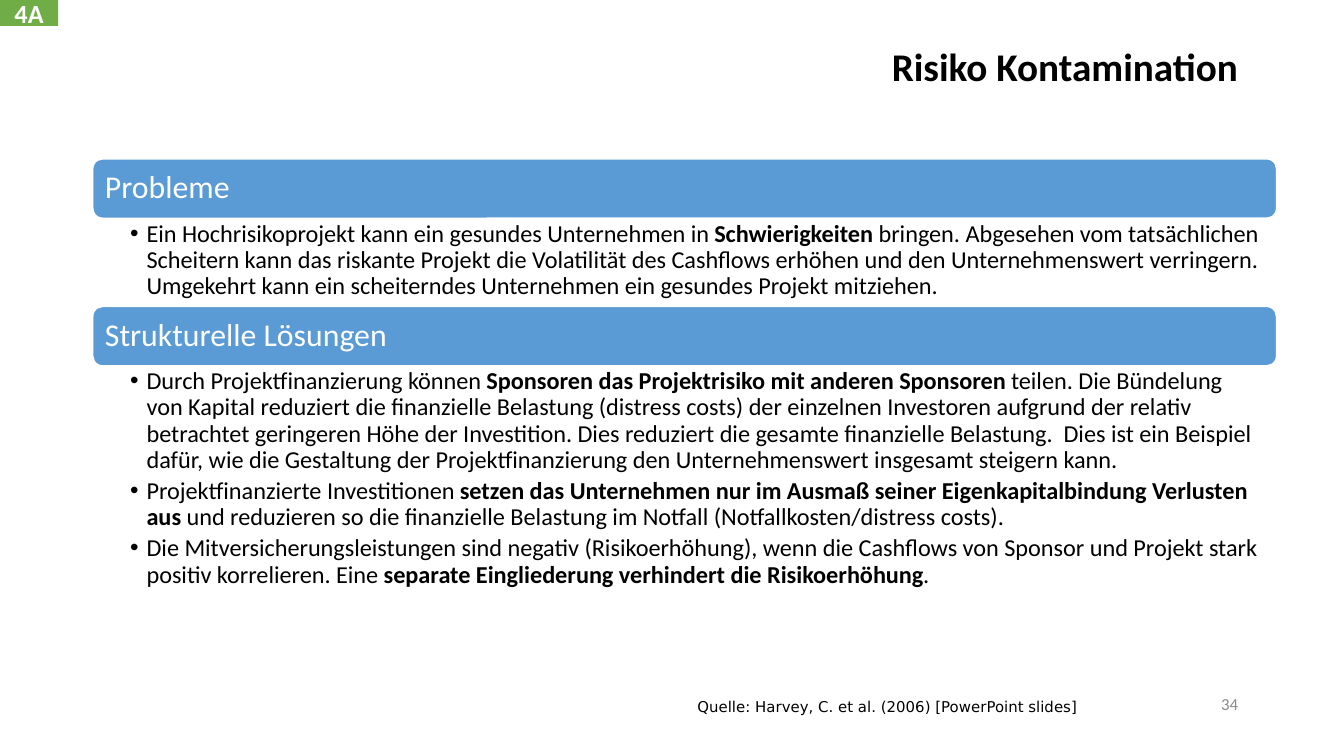
import pptx
import pptx.dml.color
import pptx.enum.shapes
import pptx.enum.text
import pptx.oxml.ns
import pptx.util
from lxml import etree

Cm = pptx.util.Cm
Pt = pptx.util.Pt
Align = pptx.enum.text.PP_ALIGN
Anchor = pptx.enum.text.MSO_ANCHOR
Preset = pptx.enum.shapes.MSO_SHAPE

COLORS = {
    "bar": "5B9BD5",
    "tag": "70AD47",
    "light": "FFFFFF",
    "text": "000000",
    "muted": "8C8C8C",
}
LEFT, WIDTH = 1.75, 22.38
BAR_HEIGHT = 1.13

# Each section: heading, top of its bar, height of its list, and bullets.
# Every bullet is plain text, a bold part, plain text.
SECTIONS = [
    ("Probleme", 3.0, 1.65, [
        ("Ein Hochrisikoprojekt kann ein gesundes Unternehmen in ",
         "Schwierigkeiten",
         " bringen. Abgesehen vom tatsächlichen Scheitern kann das riskante Projekt "
         "die Volatilität des Cashflows erhöhen und den Unternehmenswert verringern. "
         "Umgekehrt kann ein scheiterndes Unternehmen ein gesundes Projekt mitziehen."),
    ]),
    ("Strukturelle Lösungen", 5.79, 4.4, [
        ("Durch Projektfinanzierung können ",
         "Sponsoren das Projektrisiko mit anderen Sponsoren ",
         "teilen. Die Bündelung von Kapital reduziert die finanzielle Belastung "
         "(distress costs) der einzelnen Investoren aufgrund der relativ betrachtet "
         "geringeren Höhe der Investition. Dies reduziert die gesamte finanzielle "
         "Belastung.  Dies ist ein Beispiel dafür, wie die Gestaltung der "
         "Projektfinanzierung den Unternehmenswert insgesamt steigern kann."),
        ("Projektfinanzierte Investitionen ",
         "setzen das Unternehmen nur im Ausmaß seiner Eigenkapitalbindung Verlusten aus ",
         "und reduzieren so die finanzielle Belastung im Notfall "
         "(Notfallkosten/distress costs)."),
        ("Die Mitversicherungsleistungen sind negativ (Risikoerhöhung), wenn die "
         "Cashflows von Sponsor und Projekt stark positiv korrelieren. Eine ",
         "separate Eingliederung verhindert die Risikoerhöhung",
         "."),
    ]),
]


def rgb(name):
    return pptx.dml.color.RGBColor.from_string(COLORS[name])


def place(shape, left, top, width, height):
    shape.left, shape.top = Cm(left), Cm(top)
    shape.width, shape.height = Cm(width), Cm(height)


def style_font(font, size, color, bold=False, name="Calibri"):
    font.name, font.size, font.bold = name, Pt(size), bold
    font.color.rgb = rgb(color)


def set_frame(frame, anchor, left=0.25, top=0.13, right=0.25, bottom=0.13):
    """Fix wrapping, anchor and insets (in cm) of a text frame."""
    frame.word_wrap = True
    frame.auto_size = pptx.enum.text.MSO_AUTO_SIZE.NONE
    frame.vertical_anchor = anchor
    frame.margin_left, frame.margin_right = Cm(left), Cm(right)
    frame.margin_top, frame.margin_bottom = Cm(top), Cm(bottom)


def write_line(frame, text, size, color, align=Align.LEFT, bold=False, name="Calibri"):
    frame.text = text
    line = frame.paragraphs[0]
    line.alignment = align
    style_font(line.runs[0].font, size, color, bold, name)


def add_block(slide, preset, box, fill):
    block = slide.shapes.add_shape(preset, *map(Cm, box))
    block.shadow.inherit = False
    block.fill.solid()
    block.fill.fore_color.rgb = rgb(fill)
    block.line.fill.background()
    return block


def add_label(slide, box, text, size, color, anchor, **style):
    label = slide.shapes.add_textbox(*map(Cm, box))
    set_frame(label.text_frame, anchor)
    write_line(label.text_frame, text, size, color, **style)


def add_heading_bar(slide, heading, top):
    bar = add_block(slide, Preset.ROUNDED_RECTANGLE, (LEFT, top, WIDTH, BAR_HEIGHT), "bar")
    bar.line.color.rgb = rgb("light")
    bar.line.width = Pt(1)
    set_frame(bar.text_frame, Anchor.MIDDLE, left=0.18, right=0.18)
    write_line(bar.text_frame, heading, 17, "light")
    bar.text_frame.paragraphs[0].line_spacing = 0.9


def set_bullet(paragraph):
    properties = paragraph._p.get_or_add_pPr()
    properties.set("marL", str(Cm(0.31)))
    properties.set("indent", str(-Cm(0.31)))
    bullet = etree.SubElement(properties, pptx.oxml.ns.qn("a:buChar"))
    bullet.set("char", "•")


def fill_list(body, top, height, bullets):
    place(body, LEFT, top, WIDTH, height)
    frame = body.text_frame
    set_frame(frame, Anchor.TOP, left=0.71, top=0.05, right=0.33, bottom=0.05)
    for number, parts in enumerate(bullets):
        paragraph = frame.add_paragraph() if number else frame.paragraphs[0]
        set_bullet(paragraph)
        paragraph.alignment = Align.LEFT
        paragraph.line_spacing = 0.9
        paragraph.space_before = Pt(0)
        paragraph.space_after = Pt(2.6)
        for position, part in enumerate(parts):
            run = paragraph.add_run()
            run.text = part
            style_font(run.font, 13, "text", bold=position == 1)


def main():
    deck = pptx.Presentation()
    deck.slide_width, deck.slide_height = Cm(25.4), Cm(14.29)
    slide = deck.slides.add_slide(deck.slide_layouts.get_by_name("Two Content"))

    title, *bodies = slide.placeholders
    place(title, LEFT, 0.76, 21.9, 1.09)
    set_frame(title.text_frame, Anchor.MIDDLE)
    write_line(title.text_frame, "Risiko Kontamination", 21, "text", Align.RIGHT, bold=True)
    title.text_frame.paragraphs[0].line_spacing = 0.9

    for body, (heading, top, height, bullets) in zip(bodies, SECTIONS):
        add_heading_bar(slide, heading, top)
        fill_list(body, top + BAR_HEIGHT, height, bullets)

    add_label(slide, (12.93, 13.06, 8.2, 0.6),
              "Quelle: Harvey, C. et al. (2006) [PowerPoint slides]",
              8, "text", Anchor.TOP, name="DejaVu Sans")
    add_label(slide, (17.93, 12.93, 5.72, 0.76), "34", 9, "muted",
              Anchor.MIDDLE, align=Align.RIGHT)

    tag = add_block(slide, Preset.RECTANGLE, (0, 0, 1.1, 0.49), "tag")
    set_frame(tag.text_frame, Anchor.MIDDLE, 0, 0, 0, 0)
    write_line(tag.text_frame, "4A", 14, "light", Align.CENTER, bold=True)

    deck.save("out.pptx")


if __name__ == "__main__":
    main()
